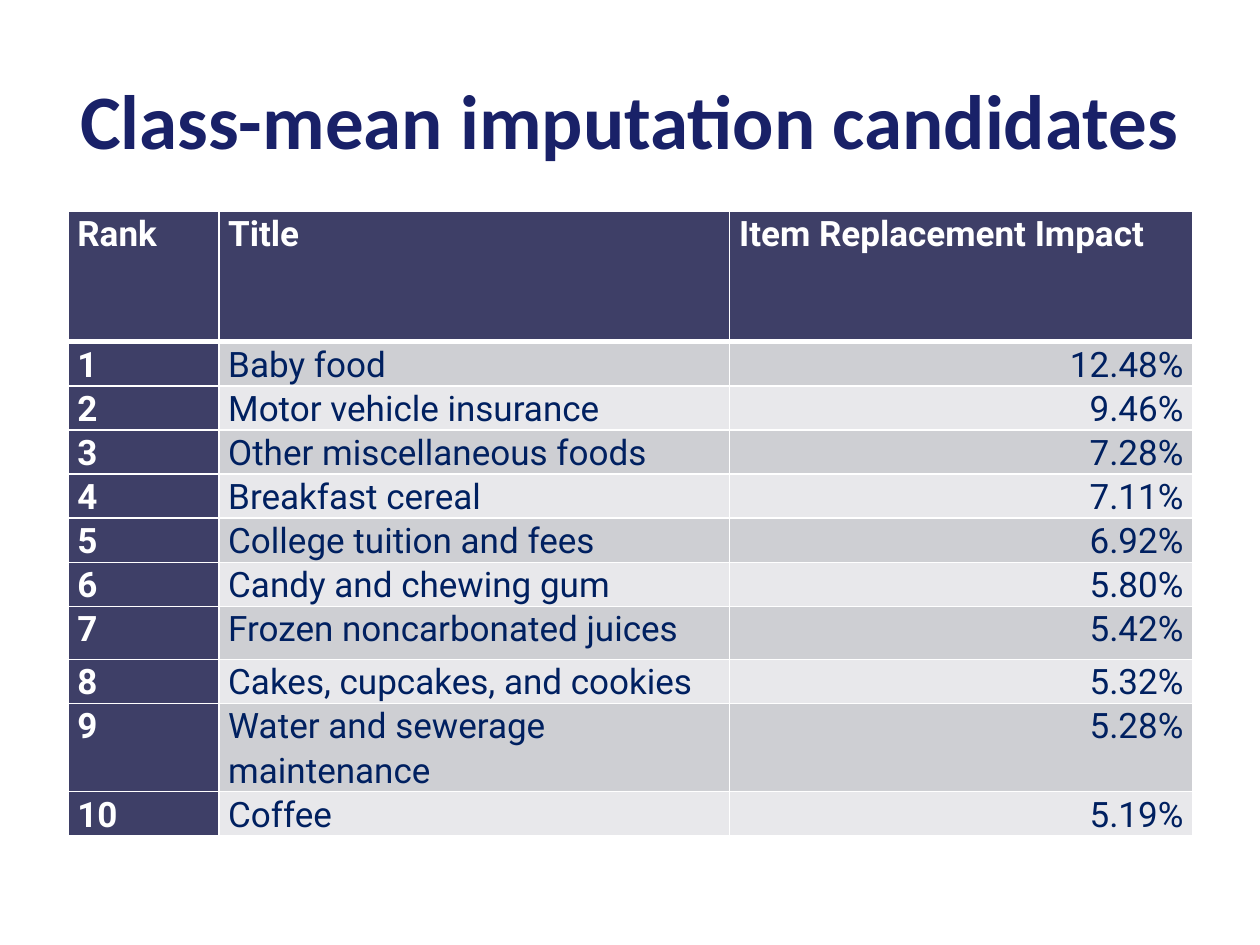
from lxml import etree
from pptx import Presentation
from pptx.dml.color import RGBColor
from pptx.enum.text import MSO_ANCHOR, PP_ALIGN
from pptx.oxml.ns import qn
from pptx.util import Cm, Pt

LEFT, CENTER, RIGHT = PP_ALIGN.LEFT, PP_ALIGN.CENTER, PP_ALIGN.RIGHT
MIDDLE = MSO_ANCHOR.MIDDLE

WHITE = RGBColor(0xFF, 0xFF, 0xFF)
TITLE_BLUE = RGBColor(0x19, 0x21, 0x68)
HEADER_FILL = RGBColor(0x3E, 0x3F, 0x67)
TEXT_BLUE = RGBColor(0x00, 0x20, 0x60)
BAND_FILLS = (RGBColor(0xCE, 0xCF, 0xD3), RGBColor(0xE8, 0xE8, 0xEB))

TITLE_ONLY = 5
HEADINGS = ("Rank", "Title", "Item Replacement Impact")
CANDIDATES = (
    ("Baby food", "12.48%"),
    ("Motor vehicle insurance", "9.46%"),
    ("Other miscellaneous foods", "7.28%"),
    ("Breakfast cereal", "7.11%"),
    ("College tuition and fees", "6.92%"),
    ("Candy and chewing gum", "5.80%"),
    ("Frozen noncarbonated juices", "5.42%"),
    ("Cakes, cupcakes, and cookies", "5.32%"),
    ("Water and sewerage maintenance", "5.28%"),
    ("Coffee", "5.19%"),
)
COLUMN_WIDTHS = (3.04, 10.3, 9.34)
ROW_HEIGHT = 0.74
SPECIAL_HEIGHTS = {0: 2.64, 1: 0.79, 7: 1.07, 9: 1.3}


class SlideBuilder:
    title_font = "Calibri"
    table_font = "Roboto"
    title_size = Pt(44)
    table_size = Pt(20)
    thin_line = Pt(1)
    thick_line = Pt(3)

    def __init__(self, slide):
        self.slide = slide

    def format_text(self, paragraph, name, size, color, bold, alignment):
        paragraph.alignment = alignment
        for run in paragraph.runs:
            run.font.name = name
            run.font.size = size
            run.font.color.rgb = color
            run.font.bold = bold

    def add_title(self, text):
        title = self.slide.shapes.title
        title.left, title.top = Cm(1.27), Cm(1.27)
        title.width, title.height = Cm(22.86), Cm(2.24)
        title.text_frame.text = text
        title.text_frame.vertical_anchor = MIDDLE
        self.format_text(title.text_frame.paragraphs[0], self.title_font,
                         self.title_size, TITLE_BLUE, True, CENTER)

    def set_borders(self, cell, row):
        properties = cell._tc.get_or_add_tcPr()
        widths = {
            "a:lnL": self.thin_line,
            "a:lnR": self.thin_line,
            "a:lnT": self.thick_line if row == 1 else self.thin_line,
            "a:lnB": self.thick_line if row == 0 else self.thin_line,
        }
        for side, width in widths.items():
            line = etree.SubElement(properties, qn(side), w=str(width))
            fill = etree.SubElement(line, qn("a:solidFill"))
            etree.SubElement(fill, qn("a:srgbClr"), val=str(WHITE))

    def format_cell(self, cell, text, row, column):
        emphasized = row == 0 or column == 0
        cell.margin_left = cell.margin_right = Cm(0.19)
        cell.margin_top = cell.margin_bottom = 0
        self.set_borders(cell, row)
        cell.fill.solid()
        cell.fill.fore_color.rgb = HEADER_FILL if emphasized else BAND_FILLS[(row - 1) % 2]
        cell.text_frame.text = text
        paragraph = cell.text_frame.paragraphs[0]
        paragraph.line_spacing = 1.07
        self.format_text(paragraph, self.table_font, self.table_size,
                         WHITE if emphasized else TEXT_BLUE, emphasized,
                         RIGHT if row and column == 2 else LEFT)

    def add_table(self, rows):
        heights = [SPECIAL_HEIGHTS.get(row, ROW_HEIGHT) for row in range(len(rows))]
        table = self.slide.shapes.add_table(
            len(rows), len(COLUMN_WIDTHS), Cm(1.37), Cm(4.25),
            Cm(sum(COLUMN_WIDTHS)), Cm(sum(heights))).table
        table.first_col = True
        for column, width in zip(table.columns, COLUMN_WIDTHS):
            column.width = Cm(width)
        for row, (values, height) in enumerate(zip(rows, heights)):
            table.rows[row].height = Cm(height)
            for column, text in enumerate(values):
                self.format_cell(table.cell(row, column), text, row, column)


def main():
    presentation = Presentation()
    presentation.slide_width, presentation.slide_height = Cm(25.4), Cm(19.05)
    slide = presentation.slides.add_slide(presentation.slide_layouts[TITLE_ONLY])
    builder = SlideBuilder(slide)
    builder.add_title("Class-mean imputation candidates")
    ranked = [(str(rank), *candidate) for rank, candidate in enumerate(CANDIDATES, 1)]
    builder.add_table([HEADINGS, *ranked])
    presentation.save("out.pptx")


if __name__ == "__main__":
    main()
